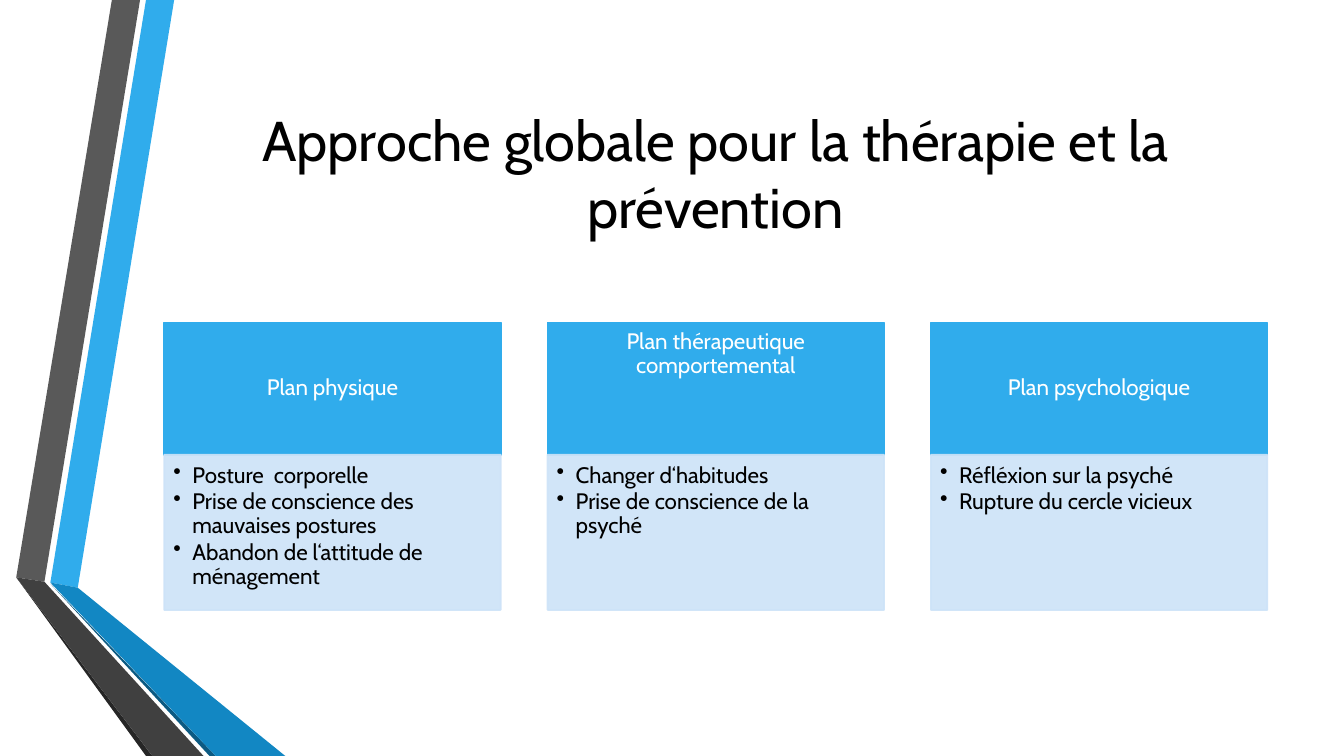
"""Build a slide with three columns on global therapy and prevention."""
from lxml.etree import SubElement
from pptx import Presentation
from pptx.dml.color import RGBColor
from pptx.enum.shapes import MSO_SHAPE as Shape
from pptx.enum.text import MSO_ANCHOR as Anchor, PP_ALIGN as Align
from pptx.oxml.ns import qn
from pptx.util import Cm, Pt

FONT = "Cabin"
BLACK = RGBColor(0x00, 0x00, 0x00)
WHITE = RGBColor(0xFF, 0xFF, 0xFF)
BLUE = RGBColor(0x30, 0xAC, 0xEC)
MID_BLUE = RGBColor(0x12, 0x87, 0xC3)
DEEP_BLUE = RGBColor(0x0C, 0x5A, 0x82)
PALE_BLUE = RGBColor(0xCD, 0xE3, 0xF8)
GRAY = RGBColor(0x59, 0x59, 0x59)
DARK_GRAY = RGBColor(0x40, 0x40, 0x40)
NEAR_BLACK = RGBColor(0x26, 0x26, 0x26)

RIBBONS = [
    (BLUE, [(1.27, 14.68), (1.96, 14.81), (4.39, 0), (3.68, 0)]),
    (GRAY, [(3.53, 0), (2.82, 0), (0.41, 14.55), (1.12, 14.66)]),
    (NEAR_BLACK, [(0.41, 14.55), (3.68, 19.05), (3.84, 19.05)]),
    (DEEP_BLUE, [(1.27, 14.71), (5.28, 19.05), (5.44, 19.05)]),
    (MID_BLUE, [(1.27, 14.68), (5.44, 19.05), (7.19, 19.05), (1.96, 14.81)]),
    (DARK_GRAY, [(5.13, 19.05), (1.12, 14.66), (0.41, 14.55), (3.84, 19.05)]),
]
COLUMNS = [
    ("Plan physique", Anchor.MIDDLE,
     ["Posture  corporelle", "Prise de conscience des mauvaises postures",
      "Abandon de l‘attitude de ménagement"]),
    ("Plan thérapeutique comportemental", Anchor.TOP,
     ["Changer d‘habitudes", "Prise de conscience de la psyché"]),
    ("Plan psychologique", Anchor.MIDDLE,
     ["Réfléxion sur la psyché", "Rupture du cercle vicieux"]),
]
COLUMN_LEFT, COLUMN_STEP, COLUMN_WIDTH = 4.14, 9.66, 8.48


def add_box(slide, left, top, height, color, anchor, margins):
    box = slide.shapes.add_shape(
        Shape.RECTANGLE, Cm(left), Cm(top), Cm(COLUMN_WIDTH), Cm(height))
    box.shadow.inherit = False
    box.fill.solid()
    box.fill.fore_color.rgb = color
    box.line.color.rgb = color
    box.line.width = Pt(1.25)
    frame = box.text_frame
    frame.word_wrap = True
    frame.vertical_anchor = anchor
    (frame.margin_left, frame.margin_top,
     frame.margin_right, frame.margin_bottom) = [Cm(margin) for margin in margins]
    return box


def write_paragraph(paragraph, text, size, color, align):
    paragraph.text = text
    paragraph.alignment = align
    paragraph.font.name = FONT
    paragraph.font.size = Pt(size)
    paragraph.font.color.rgb = color


presentation = Presentation()
presentation.slide_width = Cm(33.87)
presentation.slide_height = Cm(19.05)
slide = presentation.slides.add_slide(presentation.slide_layouts[5])

for color, points in RIBBONS:
    corners = [(Cm(x), Cm(y)) for x, y in points]
    builder = slide.shapes.build_freeform(*corners[0])
    builder.add_line_segments(corners[1:], close=True)
    ribbon = builder.convert_to_shape()
    ribbon.shadow.inherit = False
    ribbon.fill.solid()
    ribbon.fill.fore_color.rgb = color
    ribbon.line.fill.background()

title = slide.shapes.title
title.left, title.top = Cm(4.11), Cm(1.9)
title.width, title.height = Cm(27.84), Cm(4.88)
title.text_frame.vertical_anchor = Anchor.MIDDLE
write_paragraph(title.text_frame.paragraphs[0],
                "Approche globale pour la thérapie et la prévention",
                40, BLACK, Align.CENTER)

for index, (heading, anchor, items) in enumerate(COLUMNS):
    left = COLUMN_LEFT + index * COLUMN_STEP
    header = add_box(slide, left, 8.13, 3.33, BLUE, anchor, (0.3, 0.18, 0.3, 0.18))
    paragraph = header.text_frame.paragraphs[0]
    write_paragraph(paragraph, heading, 16, WHITE, Align.CENTER)
    paragraph.line_spacing = 0.9

    body = add_box(slide, left, 11.46, 3.91, PALE_BLUE, Anchor.TOP,
                   (0.23, 0.23, 0.3, 0.36))
    for color_element in body._element.spPr.iter(qn("a:srgbClr")):
        SubElement(color_element, qn("a:alpha"), val="90000")
    frame = body.text_frame
    for position, item in enumerate(items):
        paragraph = frame.add_paragraph() if position else frame.paragraphs[0]
        write_paragraph(paragraph, item, 16, BLACK, Align.LEFT)
        paragraph.line_spacing = 0.9
        paragraph.space_after = Pt(1.6)
        properties = paragraph._p.get_or_add_pPr()
        properties.set("marL", str(Cm(0.48)))
        properties.set("indent", str(-Cm(0.48)))
        bullet = properties.makeelement(qn("a:buChar"), {"char": "•"})
        properties.insert_element_before(bullet, "a:tabLst", "a:defRPr", "a:extLst")

presentation.save("out.pptx")
